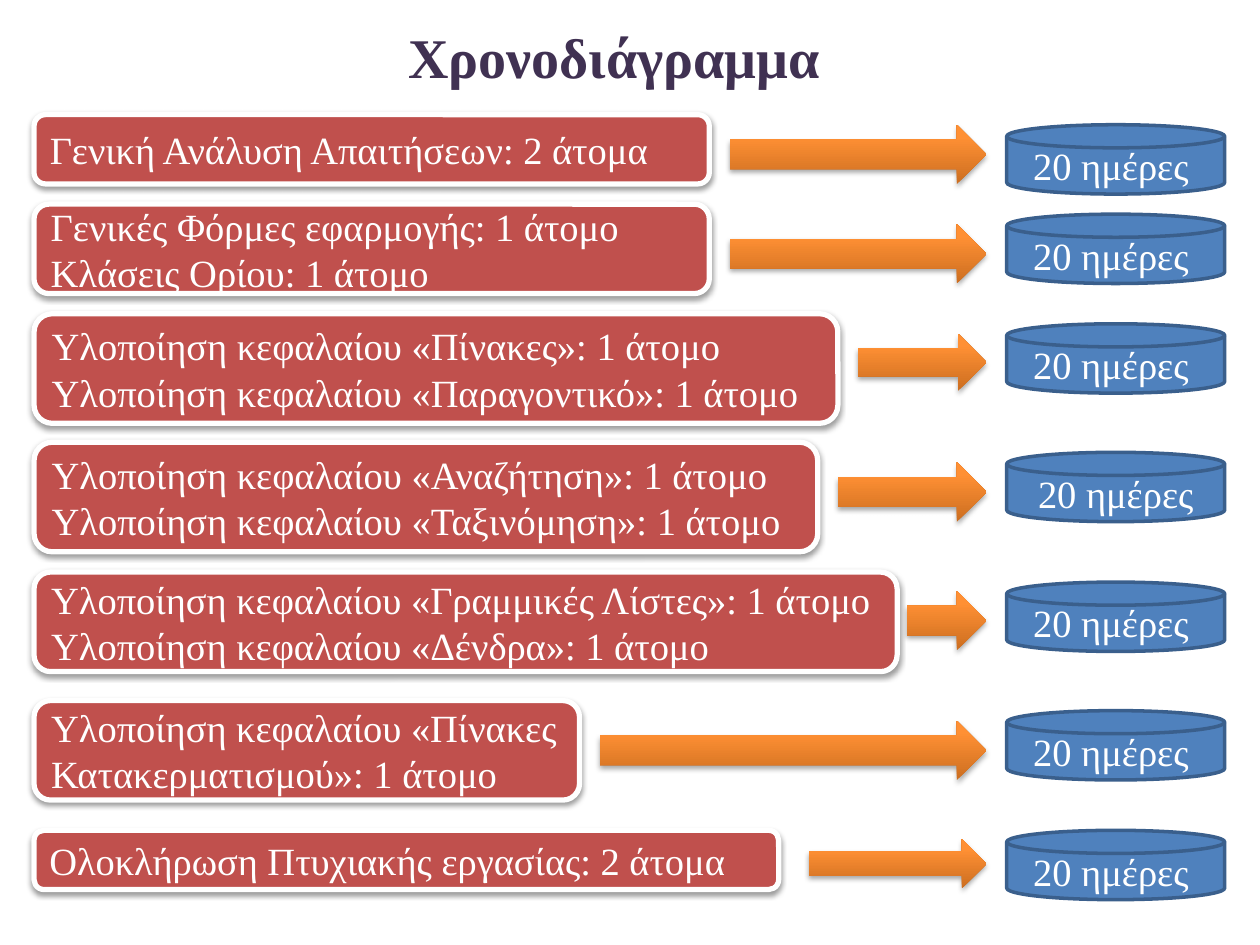
"""Build the project timeline slide: tasks, arrows and durations."""
from lxml import etree
from pptx import Presentation
from pptx.dml.color import RGBColor
from pptx.enum import shapes, text
from pptx.oxml.ns import qn
from pptx.util import Inches, Pt

RED = RGBColor(0xC0, 0x50, 0x4D)
BLUE = RGBColor(0x4F, 0x81, 0xBD)
NAVY = RGBColor(0x3A, 0x5F, 0x8C)
RUST = RGBColor(0xCC, 0x6E, 0x20)
ORANGE = RGBColor(0xFF, 0x90, 0x34)
PURPLE = RGBColor(0x40, 0x31, 0x52)
WHITE = RGBColor(0xFF, 0xFF, 0xFF)
KIND = shapes.MSO_SHAPE
SIDE = text.PP_ALIGN
ROWS = [
    (0.91, 5.36, 0.55, 5.79, 0.99, 0.47, 0.99, "20 ημέρες ",
     ["Γενική Ανάλυση Απαιτήσεων: 2 άτομα"]),
    (1.62, 5.36, 0.71, 5.79, 1.78, 0.47, 1.7, "20 ημέρες ",
     ["Γενικές Φόρμες εφαρμογής: 1 άτομο", "Κλάσεις Ορίου: 1 άτομο"]),
    (2.49, 6.38, 0.87, 6.81, 2.65, 0.45, 2.57, "20 ημέρες ",
     ["Υλοποίηση κεφαλαίου «Πίνακες»: 1 άτομο",
      "Υλοποίηση κεφαλαίου «Παραγοντικό»: 1 άτομο"]),
    (3.51, 6.22, 0.87, 6.65, 3.67, 0.47, 3.59, "20 ημέρες",
     ["Υλοποίηση κεφαλαίου «Αναζήτηση»: 1 άτομο",
      "Υλοποίηση κεφαλαίου «Ταξινόμηση»: 1 άτομο"]),
    (4.54, 6.85, 0.79, 7.2, 4.69, 0.47, 4.62, "20 ημέρες ",
     ["Υλοποίηση κεφαλαίου «Γραμμικές Λίστες»: 1 άτομο",
      "Υλοποίηση κεφαλαίου «Δένδρα»: 1 άτομο"]),
    (5.56, 4.33, 0.79, 4.76, 5.72, 0.47, 5.64, "20 ημέρες ",
     ["Υλοποίηση κεφαλαίου «Πίνακες Κατακερματισμού»: 1 άτομο"]),
    (6.59, 5.91, 0.47, 6.42, 6.66, 0.39, 6.59, "20 ημέρες ",
     ["Ολοκλήρωση Πτυχιακής εργασίας: 2 άτομα"]),
]
END = 7.83


def write(shape, lines, side, size=22, color=WHITE, bold=False):
    frame = shape.text_frame
    frame.word_wrap = True
    for i, line in enumerate(lines):
        para = frame.add_paragraph() if i else frame.paragraphs[0]
        para.alignment = side
        run = para.add_run()
        run.text = line
        font = run.font
        font.name, font.size, font.bold = "Times New Roman", Pt(size), bold
        font.color.rgb = color


def draw(kind, left, top, width, height, fill=None, line=None, weight=0, shade=None):
    shape = slide.shapes.add_shape(
        kind, Inches(left), Inches(top), Inches(width), Inches(height))
    shape.shadow.inherit = False
    if fill is not None:
        shape.fill.solid()
        shape.fill.fore_color.rgb = fill
    if line is None:
        shape.line.fill.background()
    else:
        shape.line.color.rgb = line
        shape.line.width = Pt(weight)
    if shade:
        dist, alpha = shade
        effects = shape.element.spPr.find(qn("a:effectLst"))
        outer = etree.SubElement(
            effects, qn("a:outerShdw"), blurRad=str(Pt(3.1)),
            dist=str(Pt(dist)), dir="5400000", rotWithShape="0")
        tint = etree.SubElement(outer, qn("a:srgbClr"), val="000000")
        etree.SubElement(tint, qn("a:alpha"), val=str(alpha * 1000))
    return shape


deck = Presentation()
deck.slide_width, deck.slide_height = Inches(10), Inches(7.5)
slide = deck.slides.add_slide(deck.slide_layouts[6])

title = slide.shapes.add_textbox(Inches(0.43), Inches(0.13), Inches(9), Inches(0.77))
write(title, ["Χρονοδιάγραμμα "], SIDE.CENTER, 32, PURPLE, True)

for top, width, height, start, tip, thick, disk, days, lines in ROWS:
    task = draw(KIND.ROUNDED_RECTANGLE, 0.27, top, width, height,
                RED, WHITE, 3, (1.6, 38))
    write(task, lines, SIDE.LEFT)

    arrow = draw(KIND.RIGHT_ARROW, start, tip, END - start, thick, shade=(1.8, 35))
    arrow.fill.gradient()
    arrow.fill.gradient_angle = 90
    for stop, color, place in zip(arrow.fill.gradient_stops, (RUST, ORANGE), (0, 0.8)):
        stop.color.rgb = color
        stop.position = place

    drum = draw(KIND.FLOWCHART_MAGNETIC_DISK, 7.99, disk, 1.73, 0.55, BLUE, NAVY, 2)
    write(drum, [days], SIDE.CENTER)

deck.save("out.pptx")
